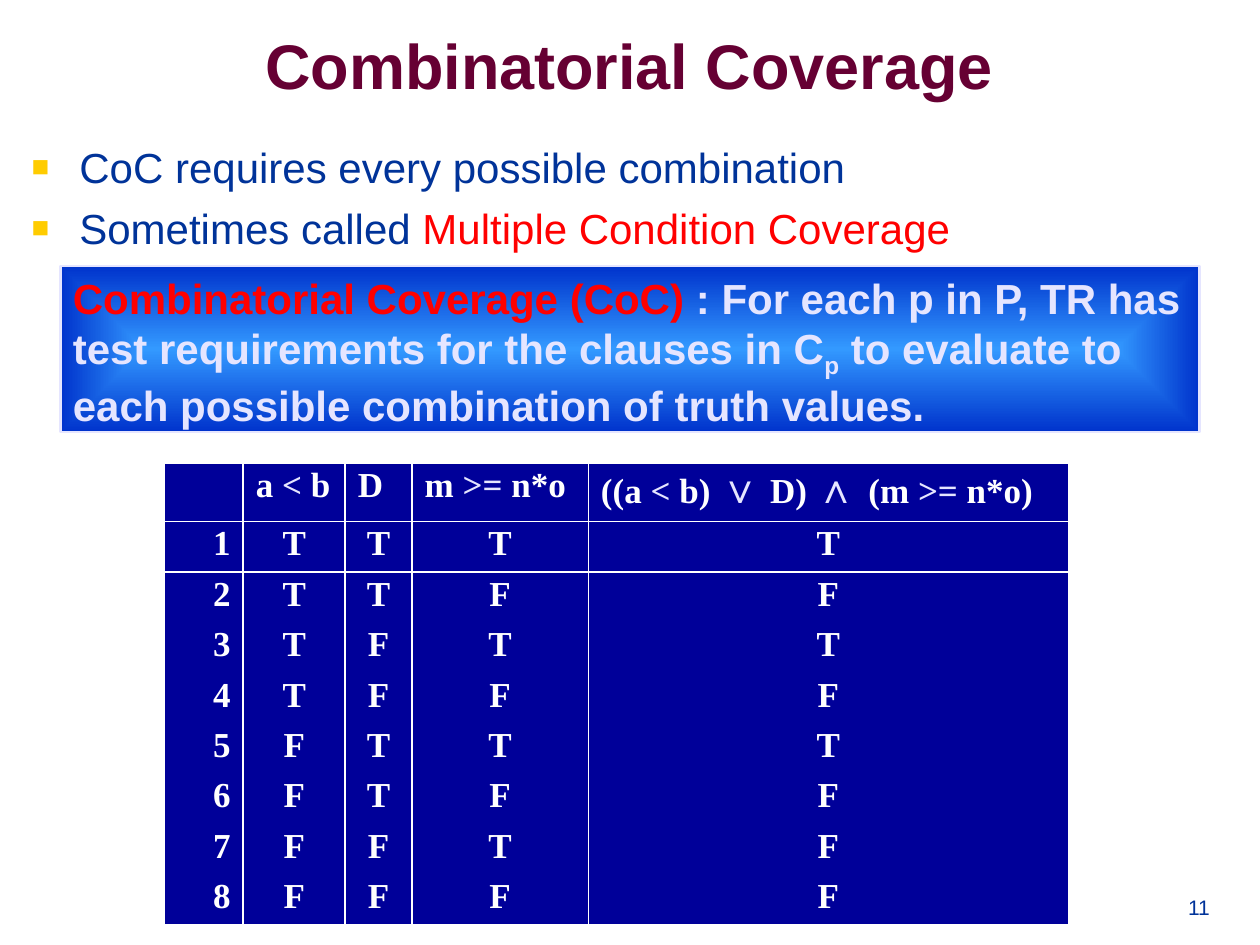
import itertools
from typing import NamedTuple

import pptx
import pptx.dml.color
import pptx.enum.shapes
import pptx.enum.text
import pptx.oxml
import pptx.oxml.ns
import pptx.util
from pptx.util import Inches

COLORS = {
    "title": "660033", "text": "003399", "bullet": "FFCC00", "accent": "FF0000",
    "pale": "E5E5FF", "glow": "3399FF", "edge": "0033CC",
    "cell": "000099", "white": "FFFFFF",
}
ALIGN = pptx.enum.text.PP_ALIGN
ANCHOR = pptx.enum.text.MSO_ANCHOR
NO_STYLE_TABLE = "{2D5ABB26-0587-4C30-8999-92F81FD0307C}"


class Span(NamedTuple):
    text: str
    color: str
    size: float = 24
    baseline: int = 0


def rgb(name: str) -> pptx.dml.color.RGBColor:
    return pptx.dml.color.RGBColor.from_string(COLORS[name])


def element(xml: str):
    """Parse an XML fragment in the drawing namespace."""
    head, mark, tail = xml.partition(">")
    slash = "/" if head.endswith("/") else ""
    head = head.rstrip("/") + " " + pptx.oxml.ns.nsdecls("a") + slash
    return pptx.oxml.parse_xml(head + mark + tail)


def add_span(para, text: str, *, color: str, size: float = 24, font: str = "Arial",
             bold: bool = False, baseline: int = 0) -> None:
    span = para.add_run()
    span.text = text
    span.font.name = font
    span.font.size = pptx.util.Pt(size)
    span.font.bold = bold
    span.font.color.rgb = rgb(color)
    if baseline:
        span.font._element.set("baseline", str(baseline * 1000))


def add_spans(para, spans: list[Span], **style) -> None:
    for span in spans:
        add_span(para, span.text, color=span.color, size=span.size,
                 baseline=span.baseline, **style)


def place(shape, left: float, top: float, width: float, height: float) -> None:
    shape.left, shape.top = Inches(left), Inches(top)
    shape.width, shape.height = Inches(width), Inches(height)


def add_bullet(para) -> None:
    props = para._p.get_or_add_pPr()
    props.set("marL", str(Inches(0.38)))
    props.set("indent", str(-Inches(0.38)))
    for xml in (f'<a:buClr><a:srgbClr val="{COLORS["bullet"]}"/></a:buClr>',
                '<a:buSzPct val="70000"/>',
                '<a:buFont typeface="Arial"/>',
                '<a:buChar char="■"/>'):
        props.append(element(xml))


def set_borders(cell, sides: str) -> None:
    """Draw white 1 pt borders; sides is a selection of L, R, T, B in that order."""
    props = cell._tc.get_or_add_tcPr()
    for index, side in enumerate(sides):
        props.insert(index, element(
            f'<a:ln{side} w="12700"><a:solidFill><a:srgbClr val="{COLORS["white"]}"/>'
            f'</a:solidFill></a:ln{side}>'))


def fill_cell(cell, spans: list[Span], align, sides: str) -> None:
    cell.fill.solid()
    cell.fill.fore_color.rgb = rgb("cell")
    set_borders(cell, sides)
    para = cell.text_frame.paragraphs[0]
    para.alignment = align
    para.line_spacing = 0.9
    add_spans(para, spans, font="Times New Roman", bold=True)


def add_title(page) -> None:
    title = page.shapes.title
    place(title, 0.11, 0.08, 9.77, 0.86)
    title.text_frame.vertical_anchor = ANCHOR.MIDDLE
    para = title.text_frame.paragraphs[0]
    para.alignment = ALIGN.CENTER
    add_span(para, "Combinatorial Coverage", color="title", size=36, bold=True)


def add_body(page) -> None:
    body = page.placeholders[1]
    place(body, 0.15, 1.07, 9.31, 0.93)
    frame = body.text_frame
    frame.auto_size = pptx.enum.text.MSO_AUTO_SIZE.NONE
    items = [
        [Span("CoC requires every possible combination", "text")],
        [Span("Sometimes called ", "text"), Span("Multiple Condition Coverage", "accent")],
    ]
    for index, spans in enumerate(items):
        para = frame.add_paragraph() if index else frame.paragraphs[0]
        para.space_before = pptx.util.Pt(6 if index else 0)
        add_bullet(para)
        add_spans(para, spans)


def add_definition(page) -> None:
    box = page.shapes.add_shape(pptx.enum.shapes.MSO_SHAPE.RECTANGLE,
                                Inches(0.48), Inches(2.11), Inches(9.04), Inches(1.32))
    box.shadow.inherit = False
    box.line.color.rgb = rgb("pale")
    box.line.width = pptx.util.Pt(1.5)

    # Gradient from the centre to the edges
    box.fill.gradient()
    for stop, color, position in zip(box.fill.gradient_stops, ("glow", "edge"), (0, 1)):
        stop.color.rgb = rgb(color)
        stop.position = position
    linear = box._element.spPr.find(".//" + pptx.oxml.ns.qn("a:lin"))
    linear.getparent().replace(linear, element(
        '<a:path path="shape">'
        '<a:fillToRect l="50000" t="50000" r="50000" b="50000"/></a:path>'))

    frame = box.text_frame
    frame.word_wrap = True
    frame.vertical_anchor = ANCHOR.TOP
    para = frame.paragraphs[0]
    para.alignment = ALIGN.LEFT
    add_spans(para, [
        Span("Combinatorial Coverage (CoC) ", "accent"),
        Span(": For each p in P, TR has test requirements for the clauses in C", "pale"),
        Span("p", "pale", baseline=-25),
        Span(" to evaluate to each possible combination of truth values.", "pale"),
    ], bold=True)


def add_truth_table(page) -> None:
    widths = [0.63, 0.81, 0.53, 1.4, 3.81]
    heights = [0.46] + [0.4] * 8
    table = page.shapes.add_table(len(heights), len(widths), Inches(1.3), Inches(3.68),
                                  Inches(sum(widths)), Inches(sum(heights))).table
    table.first_row = table.horz_banding = False
    table._tbl.tblPr.find(pptx.oxml.ns.qn("a:tableStyleId")).text = NO_STYLE_TABLE
    for column, width in zip(table.columns, widths):
        column.width = Inches(width)
    for row, height in zip(table.rows, heights):
        row.height = Inches(height)

    def white(text: str) -> Span:
        return Span(text, "white", 20)

    def pale(text: str, size: float = 20) -> Span:
        return Span(text, "pale", size)

    # Clauses and the predicate
    header = [
        [],
        [white("a "), pale("<"), white(" b")],
        [white("D")],
        [white("m "), pale(">="), white(" n*o")],
        [white("((a "), pale("<"), white(" b) "), pale("∨", 24), white(" D) "),
         pale("∧ ", 24), white("(m "), pale(">="), white(" n*o)")],
    ]
    for column, spans in enumerate(header):
        fill_cell(table.cell(0, column), spans, ALIGN.LEFT, "LRTB")

    # Every combination of the clause values
    combinations = itertools.product((True, False), repeat=3)
    for row, (less, flag, enough) in enumerate(combinations, start=1):
        values = (less, flag, enough, (less or flag) and enough)
        labels = [str(row)] + ["T" if value else "F" for value in values]
        sides = {1: "LRT", 8: "LRB"}.get(row, "LR")
        for column, label in enumerate(labels):
            align = ALIGN.CENTER if column else ALIGN.RIGHT
            fill_cell(table.cell(row, column), [white(label)], align, sides)


def add_page_number(page) -> None:
    box = page.shapes.add_textbox(Inches(9.01), Inches(6.83), Inches(0.69), Inches(0.52))
    box.text_frame.word_wrap = True
    box.text_frame.vertical_anchor = ANCHOR.BOTTOM
    para = box.text_frame.paragraphs[0]
    para.alignment = ALIGN.RIGHT
    add_span(para, "11", color="text", size=12)


def main() -> None:
    deck = pptx.Presentation()
    deck.slide_width, deck.slide_height = Inches(10), Inches(7.5)
    page = deck.slides.add_slide(deck.slide_layouts[1])
    add_title(page)
    add_body(page)
    add_definition(page)
    add_truth_table(page)
    add_page_number(page)
    deck.save("out.pptx")


if __name__ == "__main__":
    main()
